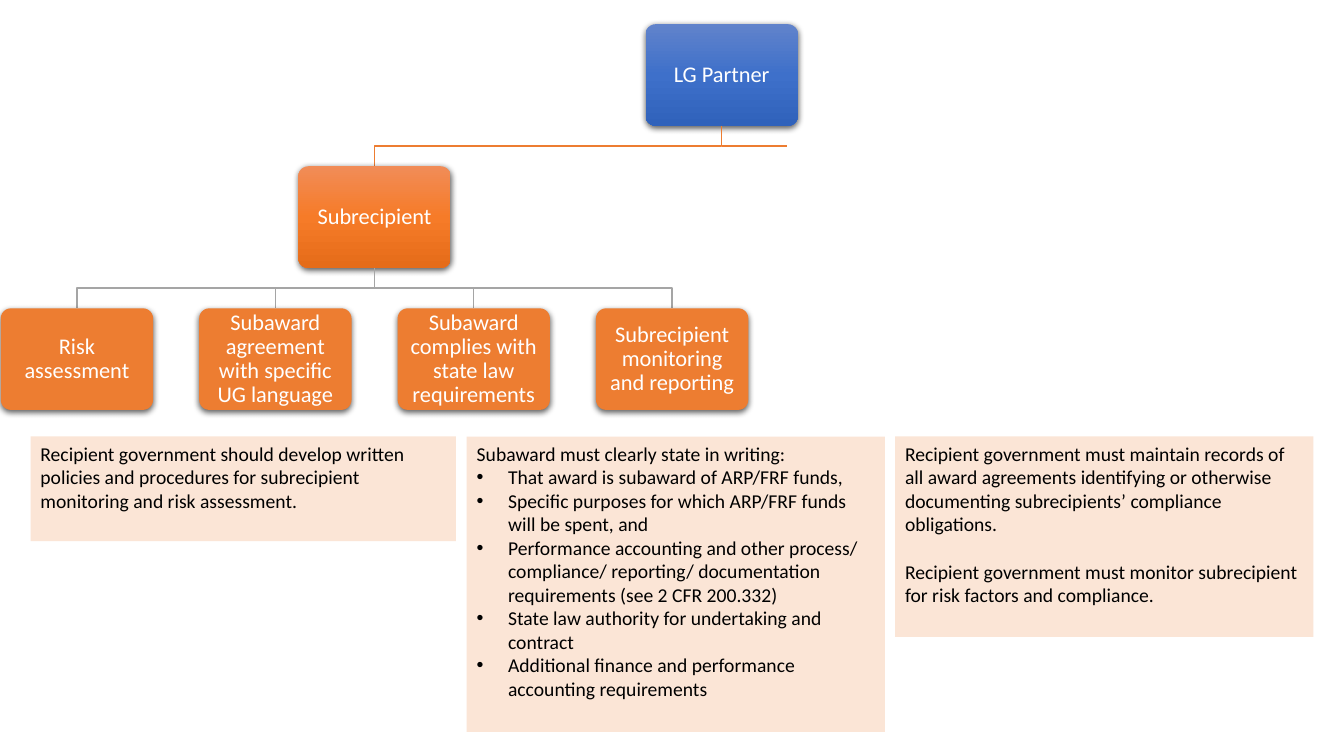
"""Build the subrecipient compliance slide: an organisation chart above three notes."""
from dataclasses import dataclass

from pptx import Presentation
from pptx import oxml, util as u
from pptx.dml.color import RGBColor
from pptx.enum import shapes, text
from pptx.oxml.ns import nsdecls, qn

FONT = "Calibri"
ORANGE, GREY, PEACH = "ED7D31", "A5A5A5", "FBE5D6"
BOX_WIDTH, BOX_HEIGHT = 3.84, 2.56
FIRST_ROW, ROW_PITCH = 0.61, 3.58
FIRST_COLUMN, COLUMN_PITCH = 0.02, 5.0
PANEL_TOP = 11.0
BULLET_INDENT = 0.79


@dataclass(frozen=True)
class Box:
    label: str
    left: float
    row: int
    colours: tuple[str, ...] = (ORANGE,)

    @property
    def top(self) -> float:
        return FIRST_ROW + self.row * ROW_PITCH

    @property
    def bottom(self) -> float:
        return self.top + BOX_HEIGHT

    @property
    def centre(self) -> float:
        return self.left + BOX_WIDTH / 2


@dataclass(frozen=True)
class Panel:
    left: float
    width: float
    height: float
    paragraphs: tuple[str, ...]
    bullets: tuple[str, ...] = ()


PARTNER = Box("LG Partner", 16.27, 0, ("6183CB", "3E70CA", "3062BB"))
SUBRECIPIENT = Box("Subrecipient", FIRST_COLUMN + 1.5 * COLUMN_PITCH, 1,
                   ("F18C57", "F67B28", "E56C19"))
DUTIES = [
    Box(label, FIRST_COLUMN + column * COLUMN_PITCH, 2)
    for column, label in enumerate((
        "Risk assessment",
        "Subaward agreement with specific UG language",
        "Subaward complies with state law requirements",
        "Subrecipient monitoring and reporting",
    ))
]
POLICY_PANEL = Panel(0.77, 10.72, 2.64, (
    "Recipient government should develop written policies and procedures for "
    "subrecipient monitoring and risk assessment.",
))
SUBAWARD_PANEL = Panel(11.76, 10.54, 7.44, ("Subaward must clearly state in writing:",), (
    "That award is subaward of ARP/FRF funds,",
    "Specific purposes for which ARP/FRF funds will be spent, and",
    "Performance accounting and other process/ compliance/ reporting/ "
    "documentation requirements (see 2 CFR 200.332)",
    "State law authority for undertaking and contract",
    "Additional finance and performance accounting requirements",
))
RECORDS_PANEL = Panel(22.56, 10.54, 5.05, (
    "Recipient government must maintain records of all award agreements identifying "
    "or otherwise documenting subrecipients’ compliance obligations.",
    "Recipient government must monitor subrecipient for risk factors and compliance.",
))


def rgb(colour: str) -> RGBColor:
    return RGBColor.from_string(colour)


def format_font(paragraph, size: int, colour: str) -> None:
    paragraph.font.name = FONT
    paragraph.font.size = u.Pt(size)
    paragraph.font.color.rgb = rgb(colour)


def fill_box(shape, colours: tuple[str, ...]) -> None:
    if len(colours) == 1:
        shape.fill.solid()
        shape.fill.fore_color.rgb = rgb(colours[0])
        return
    shape.fill.gradient()
    shape.fill.gradient_angle = 270
    step = 100000 // (len(colours) - 1)
    stops = "".join(
        f'<a:gs pos="{index * step}"><a:srgbClr val="{colour}"/></a:gs>'
        for index, colour in enumerate(colours)
    )
    stop_list = next(shape._element.spPr.iter(qn("a:gsLst")))
    stop_list.getparent().replace(
        stop_list, oxml.parse_xml(f'<a:gsLst {nsdecls("a")}>{stops}</a:gsLst>'))


def add_shadow(shape) -> None:
    shape.shadow.inherit = False
    effects = shape._element.spPr.find(qn("a:effectLst"))
    effects.append(oxml.parse_xml(
        f'<a:outerShdw {nsdecls("a")} blurRad="{u.Pt(4.5)}" dist="{u.Pt(1.5)}" '
        'dir="5400000" algn="ctr" rotWithShape="0">'
        '<a:srgbClr val="000000"><a:alpha val="63000"/></a:srgbClr></a:outerShdw>'))


def add_box(slide, box: Box) -> None:
    shape = slide.shapes.add_shape(
        shapes.MSO_SHAPE.ROUNDED_RECTANGLE,
        u.Cm(box.left), u.Cm(box.top), u.Cm(BOX_WIDTH), u.Cm(BOX_HEIGHT))
    shape.adjustments[0] = 0.1
    fill_box(shape, box.colours)
    shape.line.fill.background()
    add_shadow(shape)
    frame = shape.text_frame
    frame.word_wrap = True
    frame.vertical_anchor = text.MSO_ANCHOR.MIDDLE
    frame.margin_left = frame.margin_right = u.Cm(0.17)
    frame.margin_top = frame.margin_bottom = u.Cm(0.17)
    paragraph = frame.paragraphs[0]
    paragraph.text = box.label
    paragraph.alignment = text.PP_ALIGN.CENTER
    paragraph.line_spacing = 0.9
    format_font(paragraph, 16, "FFFFFF")


def add_link(slide, points: list[tuple[float, float]], colour: str) -> None:
    start, *rest = [(u.Cm(x), u.Cm(y)) for x, y in points]
    builder = slide.shapes.build_freeform(*start)
    builder.add_line_segments(rest, close=False)
    shape = builder.convert_to_shape()
    shape.fill.background()
    shape.line.color.rgb = rgb(colour)
    shape.line.width = u.Pt(1)
    shape.shadow.inherit = False


def elbow(parent: Box, child: Box) -> list[tuple[float, float]]:
    middle = (parent.bottom + child.top) / 2
    return [(parent.centre, parent.bottom), (parent.centre, middle),
            (child.centre, middle), (child.centre, child.top)]


def set_bullet(paragraph, bulleted: bool) -> None:
    properties = paragraph._p.get_or_add_pPr()
    indent = u.Cm(BULLET_INDENT) if bulleted else 0
    properties.set("marL", str(indent))
    properties.set("indent", str(-indent))
    if bulleted:
        properties.append(oxml.parse_xml(f'<a:buFont {nsdecls("a")} typeface="Arial"/>'))
        properties.append(oxml.parse_xml(f'<a:buChar {nsdecls("a")} char="•"/>'))
    else:
        properties.append(oxml.parse_xml(f'<a:buNone {nsdecls("a")}/>'))


def format_panel(shape, panel: Panel) -> None:
    shape.left, shape.top = u.Cm(panel.left), u.Cm(PANEL_TOP)
    shape.width, shape.height = u.Cm(panel.width), u.Cm(panel.height)
    shape.fill.solid()
    shape.fill.fore_color.rgb = rgb(PEACH)
    frame = shape.text_frame
    frame.word_wrap = True
    frame.auto_size = text.MSO_AUTO_SIZE.NONE
    frame.vertical_anchor = text.MSO_ANCHOR.TOP
    for index, content in enumerate(panel.paragraphs + panel.bullets):
        paragraph = frame.paragraphs[0] if index == 0 else frame.add_paragraph()
        bulleted = index >= len(panel.paragraphs)
        paragraph.text = content
        paragraph.alignment = text.PP_ALIGN.LEFT
        paragraph.space_before = u.Pt(17 if index and not bulleted else 0)
        set_bullet(paragraph, bulleted)
        format_font(paragraph, 14, "000000")


def main() -> None:
    presentation = Presentation()
    presentation.slide_width, presentation.slide_height = u.Cm(33.87), u.Cm(19.05)
    slide = presentation.slides.add_slide(presentation.slide_layouts[1])
    title = slide.shapes.title._element
    title.getparent().remove(title)

    add_box(slide, PARTNER)
    partner_link = elbow(PARTNER, SUBRECIPIENT)
    add_link(slide, partner_link, ORANGE)
    add_link(slide, [partner_link[1], (19.84, partner_link[1][1])], ORANGE)
    add_box(slide, SUBRECIPIENT)
    for duty in DUTIES:
        add_link(slide, elbow(SUBRECIPIENT, duty), GREY)
        add_box(slide, duty)

    format_panel(slide.placeholders[1], SUBAWARD_PANEL)
    for panel in (POLICY_PANEL, RECORDS_PANEL):
        format_panel(slide.shapes.add_textbox(0, 0, 0, 0), panel)
    presentation.save("out.pptx")


if __name__ == "__main__":
    main()
